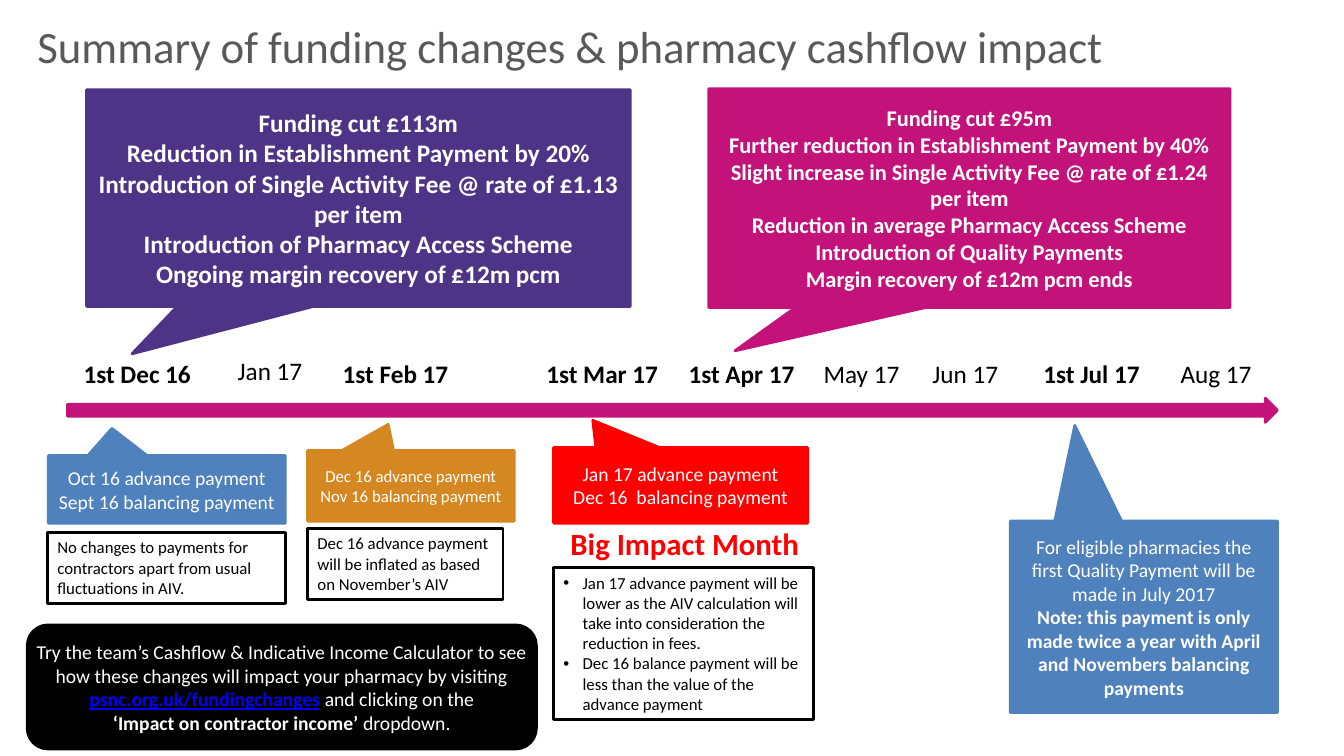
from lxml import etree
from pptx import Presentation, util as u
from pptx.dml.color import RGBColor
from pptx.enum import shapes, text
from pptx.oxml.ns import qn

W, H = 13.33, 7.5
FONT = "Calibri"
PURPLE, PINK, BLUE, ORANGE, RED = "4E3487", "C3137B", "4F81BD", "D58721", "FF0000"
BLACK, WHITE, GREY, LINK = "000000", "FFFFFF", "595959", "0000FF"

# All boxes and points are percentages of the slide's width and height.
TITLE = "Summary of funding changes & pharmacy cashflow impact"
TITLE_BOX = (2.03, 1.6, 94.3, 8.93)
TIMELINE_BOX = (5.03, 52.67, 90.02, 3.2)

DATE_HEIGHT = 5.33
DATES = [
    ("1st Dec 16", 5.48, 46.67, 9.6, True),
    ("Jan 17", 16.95, 46.4, 6.38, False),
    ("1st Feb 17", 24.76, 46.67, 9.53, True),
    ("1st Mar 17", 39.91, 46.8, 9.9, True),
    ("1st Apr 17", 50.49, 46.67, 9.53, True),
    ("May 17", 60.54, 46.8, 7.2, False),
    ("Jun 17", 68.64, 46.8, 6.98, False),
    ("1st Jul 17", 76.89, 46.8, 8.78, True),
    ("Aug 17", 87.1, 46.8, 6.83, False),
]

CALLOUTS = [
    ((6.45, 11.87, 40.44, 28.67), (9.83, 46.8), PURPLE, 18, True, [
        "Funding cut £113m",
        "Reduction in Establishment Payment by 20%",
        "Introduction of Single Activity Fee @ rate of £1.13 per item",
        "Introduction of Pharmacy Access Scheme",
        "Ongoing margin recovery of £12m pcm"]),
    ((52.74, 11.73, 38.78, 28.93), (54.69, 46.4), PINK, 16, True, [
        "Funding cut £95m",
        "Further reduction in Establishment Payment by 40%",
        "Slight increase in Single Activity Fee @ rate of £1.24 per item",
        "Reduction in average Pharmacy Access Scheme",
        "Introduction of Quality Payments",
        "Margin recovery of £12m pcm ends"]),
    ((3.6, 60.27, 17.63, 8.93), (8.33, 56.67), BLUE, 14, False, [
        "Oct 16 advance payment", "Sept 16 balancing payment"]),
    ((22.88, 59.6, 15.38, 9.33), (28.88, 56.13), ORANGE, 12, False, [
        "Dec 16 advance payment", "Nov 16 balancing payment"]),
    ((41.19, 59.2, 18.9, 10), (44.11, 55.6), RED, 14, False, [
        "Jan 17 advance payment", "Dec 16  balancing payment"]),
    ((75.17, 68.93, 19.88, 25.33), (79.97, 56.27), BLUE, 14, False, [
        "For eligible pharmacies the first Quality Payment will be made in July 2017",
        [("Note: this payment is only made twice a year with April and "
          "Novembers balancing payments", {"bold": True})]]),
]

NOTES = [
    ((3.53, 70.4, 17.7, 9.47), False, [
        "No changes to payments for contractors apart from usual fluctuations in AIV."]),
    ((22.88, 69.87, 14.55, 9.47), False, [
        "Dec 16 advance payment will be inflated as based on November’s AIV"]),
    ((41.19, 75.07, 19.35, 20.13), True, [
        "Jan 17 advance payment will be lower as the AIV calculation will take "
        "into consideration the reduction in fees.",
        "Dec 16 balance payment will be less than the value of the advance payment"]),
]

IMPACT, IMPACT_BOX = "Big Impact Month", (41.71, 68.8, 18.68, 6.27)

ADVICE_BOX = (2.03, 82.67, 37.88, 16.4)
ADVICE = [
    "Try the team’s Cashflow & Indicative Income Calculator to see how these "
    "changes will impact your pharmacy by visiting",
    [("psnc.org.uk/fundingchanges", {"color": LINK, "bold": True, "underline": True}),
     (" and clicking on the", {})],
    [("‘Impact on contractor income’ ", {"bold": True}), ("dropdown.", {})],
]


def rgb(value):
    return RGBColor.from_string(value)


def place(box):
    x, y, w, h = box
    return [u.Inches(v * side / 100) for v, side in ((x, W), (y, H), (w, W), (h, H))]


def write(sp, paragraphs, size, color, bold=False, align=text.PP_ALIGN.LEFT,
          anchor=text.MSO_ANCHOR.TOP, wrap=True, bullets=False, inset=0.1):
    tf = sp.text_frame
    tf.word_wrap = wrap
    tf.auto_size = text.MSO_AUTO_SIZE.NONE
    tf.vertical_anchor = anchor
    tf.margin_left = tf.margin_right = u.Inches(inset)
    tf.margin_top = tf.margin_bottom = u.Inches(0.05)
    for i, content in enumerate(paragraphs):
        p = tf.paragraphs[0] if i == 0 else tf.add_paragraph()
        p.alignment = align
        if bullets:
            pPr = p._p.get_or_add_pPr()
            pPr.set("marL", str(u.Inches(0.19)))
            pPr.set("indent", str(-u.Inches(0.19)))
            etree.SubElement(pPr, qn("a:buFont")).set("typeface", "Arial")
            etree.SubElement(pPr, qn("a:buChar")).set("char", "•")
        for words, style in [(content, {})] if isinstance(content, str) else content:
            r = p.add_run()
            r.text = words
            r.font.name = FONT
            r.font.size = u.Pt(size)
            r.font.bold = style.get("bold", bold)
            r.font.underline = style.get("underline", False)
            r.font.color.rgb = rgb(style.get("color", color))


def add_shape(s, kind, box, fill, line):
    sp = s.shapes.add_shape(kind, *place(box))
    sp.shadow.inherit = False
    sp.fill.solid()
    sp.fill.fore_color.rgb = rgb(fill)
    sp.line.color.rgb = rgb(line)
    sp.line.width = u.Pt(2)
    return sp


def add_label(s, box, words, size, color, bold):
    write(s.shapes.add_textbox(*place(box)), [words], size, color, bold=bold, wrap=False)


def main():
    kinds = shapes.MSO_SHAPE
    centred = {"align": text.PP_ALIGN.CENTER, "anchor": text.MSO_ANCHOR.MIDDLE}
    prs = Presentation()
    prs.slide_width, prs.slide_height = u.Inches(W), u.Inches(H)
    s = prs.slides.add_slide(prs.slide_layouts[5])

    title = s.shapes.title
    title.left, title.top, title.width, title.height = place(TITLE_BOX)
    write(title, [TITLE], 32, GREY, anchor=text.MSO_ANCHOR.MIDDLE)

    add_shape(s, kinds.RIGHT_ARROW, TIMELINE_BOX, PINK, PINK)
    for words, x, y, w, bold in DATES:
        add_label(s, (x, y, w, DATE_HEIGHT), words, 18, BLACK, bold)

    for box, tip, color, size, bold, paragraphs in CALLOUTS:
        sp = add_shape(s, kinds.RECTANGULAR_CALLOUT, box, color, color)
        for axis in (0, 1):
            start, length = box[axis], box[axis + 2]
            sp.adjustments[axis] = (tip[axis] - start) / length - 0.5
        write(sp, paragraphs, size, WHITE, bold=bold, **centred)

    add_label(s, IMPACT_BOX, IMPACT, 22, RED, True)
    for box, bullets, paragraphs in NOTES:
        sp = add_shape(s, kinds.RECTANGLE, box, WHITE, BLACK)
        write(sp, paragraphs, 12, BLACK, bullets=bullets)

    sp = add_shape(s, kinds.ROUNDED_RECTANGLE, ADVICE_BOX, BLACK, BLACK)
    write(sp, ADVICE, 14, WHITE, inset=0.02, **centred)
    prs.save("out.pptx")


if __name__ == "__main__":
    main()
